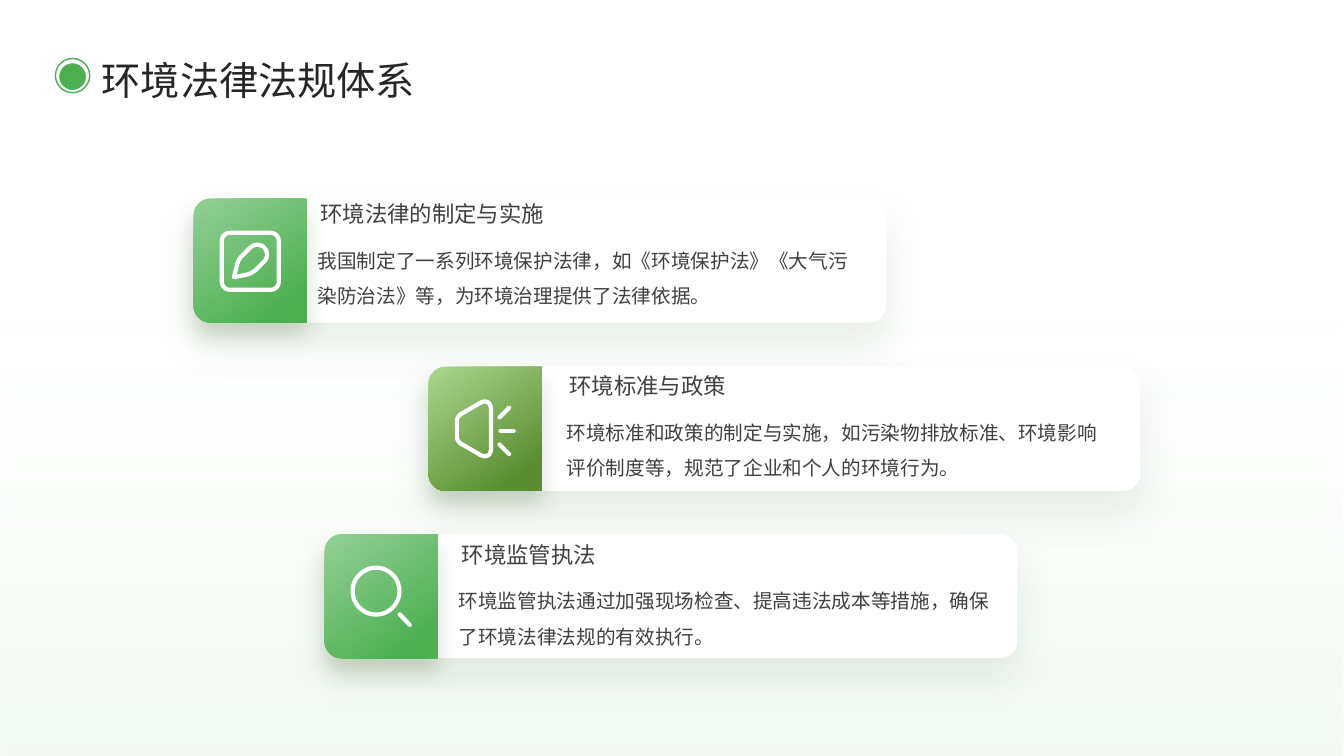
from math import cos, sin, tau
from lxml import etree
from pptx import Presentation
from pptx import util as u
from pptx.dml.color import RGBColor
from pptx.enum import shapes as sh, text as tx
from pptx.oxml import ns

PX = 9144  # EMU in one px, 100 px to the inch
FONT = "Noto Sans CJK SC"
HUE = {
    "white": "FFFFFF", "green": "4CAF50", "mint": "93D095",
    "olive": "588E31", "lime": "ACD78E", "haze": "DBEFDC", "mist": "B7E0B8",
    "title": "262626", "text": "404040", "shade": "265828", "dusk": "3A5E21",
}
TITLE = "环境法律法规体系"
GREEN, OLIVE = ("mint", "green"), ("lime", "olive")

# Icon strokes in tenths of a px: (closed, [(x, y, corner radius), ...])
RING = [(250 + 232 * cos(tau * i / 60), 255 + 232 * sin(tau * i / 60), 0)
        for i in range(60)]
PEN = [
    (True, [(20, 20, 80), (585, 20, 80), (585, 585, 80), (20, 585, 80)]),
    (True, [(140, 460, 0), (185, 285, 40), (372, 98, 97), (509, 235, 97),
            (320, 425, 60)]),
]
HORN = [
    (True, [(22, 162, 45), (360, -34, 124), (360, 604, 124), (22, 408, 45)]),
    (False, [(445, 440, 0), (540, 535, 0)]),
    (False, [(455, 305, 0), (585, 305, 0)]),
    (False, [(445, 170, 0), (540, 75, 0)]),
]
LENS = [(True, RING), (False, [(485, 485, 0), (585, 590, 0)])]

# left, top, width, text left, text top, tab colours, icon, icon top, head, body
CARDS = [
    (192, 197, 687, 311, 192, GREEN, PEN, 32, "环境法律的制定与实施",
     "我国制定了一系列环境保护法律，如《环境保护法》《大气污染防治法》等，为环境治理提供了法律依据。"),
    (425, 364, 706, 558, 363, OLIVE, HORN, 33, "环境标准与政策",
     "环境标准和政策的制定与实施，如污染物排放标准、环境影响评价制度等，规范了企业和个人的环境行为。"),
    (322, 530, 687, 451, 530, GREEN, LENS, 31, "环境监管执法",
     "环境监管执法通过加强现场检查、提高违法成本等措施，确保了环境法律法规的有效执行。"),
]
HIGH, TAB, ROUND = 123, 112, 17


def rgb(name):
    return RGBColor.from_string(HUE[name])


def box(*lengths):
    return [n * PX for n in lengths]


def tint(parent, name, alpha=100):
    clr = etree.SubElement(parent, ns.qn("a:srgbClr"), val=HUE[name])
    if alpha < 100:
        etree.SubElement(clr, ns.qn("a:alpha"), val=str(alpha * 1000))


def blend(shape, stops, angle):
    """Fill with a linear gradient; stops are (percent, colour, opacity)."""
    shape.fill.gradient()
    grad = shape.element.spPr.find(ns.qn("a:gradFill"))
    for child in list(grad):
        grad.remove(child)
    row = etree.SubElement(grad, ns.qn("a:gsLst"))
    for place, name, alpha in stops:
        stop = etree.SubElement(row, ns.qn("a:gs"), pos=str(place * 1000))
        tint(stop, name, alpha)
    etree.SubElement(grad, ns.qn("a:lin"), ang=str(angle * 60000), scaled="0")


def shade(shape, name, alpha, blur, drop):
    shape.shadow.inherit = False
    effects = shape.element.spPr.find(ns.qn("a:effectLst"))
    outer = etree.SubElement(
        effects, ns.qn("a:outerShdw"), blurRad=str(u.Pt(blur)),
        dist=str(u.Pt(drop)), dir="5400000", algn="t", rotWithShape="0")
    tint(outer, name, alpha)


def preset(group, kind, area, fill=None, line=None):
    shape = group.add_shape(kind, *box(*area))
    shape.shadow.inherit = False
    if fill:
        shape.fill.solid()
        shape.fill.fore_color.rgb = rgb(fill)
    if line:
        shape.line.color.rgb = rgb(line)
        shape.line.width = u.Pt(1)
    else:
        shape.line.fill.background()
    return shape


def bend(points):
    """Turn each corner with a radius into a short run of arc points."""
    out = []
    for i, (x, y, r) in enumerate(points):
        if not r:
            out.append((x, y))
            continue
        ends = []
        for px, py, _ in (points[i - 1], points[(i + 1) % len(points)]):
            f = r / ((px - x) ** 2 + (py - y) ** 2) ** 0.5
            ends.append((x + (px - x) * f, y + (py - y) * f))
        for step in range(13):
            t = step / 12
            s = 1 - t
            a = s ** 3 + 1.35 * s * s * t
            b = t ** 3 + 1.35 * t * t * s
            c = 1 - a - b
            out.append(tuple(a * p + c * q + b * n
                             for p, q, n in zip(ends[0], (x, y), ends[1])))
    return out


def trace(group, strokes, left, top):
    """Draw strokes, given in tenths of a px, as one freeform."""
    pen = None
    for closed, points in strokes:
        first, *rest = bend(points)
        if pen is None:
            pen = group.build_freeform(*first, scale=PX / 10)
        else:
            pen.move_to(*first)
        pen.add_line_segments(rest, close=closed)
    shape = pen.convert_to_shape(*box(left, top))
    shape.shadow.inherit = False
    return shape


def write(shape, words, size, name, space, pad, anchor):
    frame = shape.text_frame
    frame.text = words
    frame.word_wrap = True
    frame.auto_size = tx.MSO_AUTO_SIZE.NONE
    frame.vertical_anchor = anchor
    frame.margin_left = frame.margin_right = pad[0] * PX
    frame.margin_top = frame.margin_bottom = pad[1] * PX
    para = frame.paragraphs[0]
    para.alignment = tx.PP_ALIGN.LEFT
    para.line_spacing = space
    font = para.font
    font.size, font.name, font.color.rgb = u.Pt(size), FONT, rgb(name)
    props = para._p.pPr.find(ns.qn("a:defRPr"))
    etree.SubElement(props, ns.qn("a:ea"), typeface=FONT)


def add_card(group, left, top, width, hue, icon, rise):
    card = preset(group, sh.MSO_SHAPE.ROUNDED_RECTANGLE,
                  (left, top, width, HIGH), "white")
    card.adjustments[0] = ROUND / HIGH
    shade(card, "shade", 10, 30, 15)

    w, h, r = TAB * 10, HIGH * 10, ROUND * 10
    tab = trace(group, [(True, [(0, 0, r), (w, 0, 0), (w, h, 0), (0, h, r)])],
                left, top)
    tab.line.fill.background()
    blend(tab, [(0, hue[0], 100), (86, hue[1], 100)], 54)
    shade(tab, "dusk", 20, 15, 10)

    mark = trace(group, icon, left + 26, top + rise)
    mark.fill.background()
    mark.line.color.rgb = rgb("white")
    mark.line.width = u.Pt(3)
    mark.element.spPr.find(ns.qn("a:ln")).set("cap", "rnd")


def main():
    deck = Presentation()
    deck.slide_width, deck.slide_height = box(1333, 750)
    slide = deck.slides.add_slide(deck.slide_layouts[5])
    group = slide.shapes
    mid, high = tx.MSO_ANCHOR.MIDDLE, tx.MSO_ANCHOR.TOP

    wash = preset(group, sh.MSO_SHAPE.RECTANGLE, (0, 0, 1333, 750))
    blend(wash, [(40, "haze", 0), (100, "mist", 15)], 90)
    group.title.element.addprevious(wash.element)

    title = group.title
    title.left, title.top, title.width, title.height = box(101, 51, 1188, 51)
    write(title, TITLE, 28, "title", 1.1, (0, 0), mid)

    for left, top, width, tleft, ttop, hue, icon, rise, head, body in CARDS:
        add_card(group, left, top, width, hue, icon, rise)
        label = group.add_textbox(*box(tleft, ttop, 547, 37))
        write(label, head, 16, "text", 1.1, (7, 4), mid)
        note = group.add_textbox(*box(tleft, ttop + 39, 547, 84))
        write(note, body, 14, "text", 1.5, (4, 4), high)

    bullet = group.add_group_shape().shapes
    preset(bullet, sh.MSO_SHAPE.OVAL, (55, 58, 34, 34), "white", "green")
    preset(bullet, sh.MSO_SHAPE.OVAL, (58, 62, 28, 28), "green", "white")
    deck.save("out.pptx")


if __name__ == "__main__":
    main()
